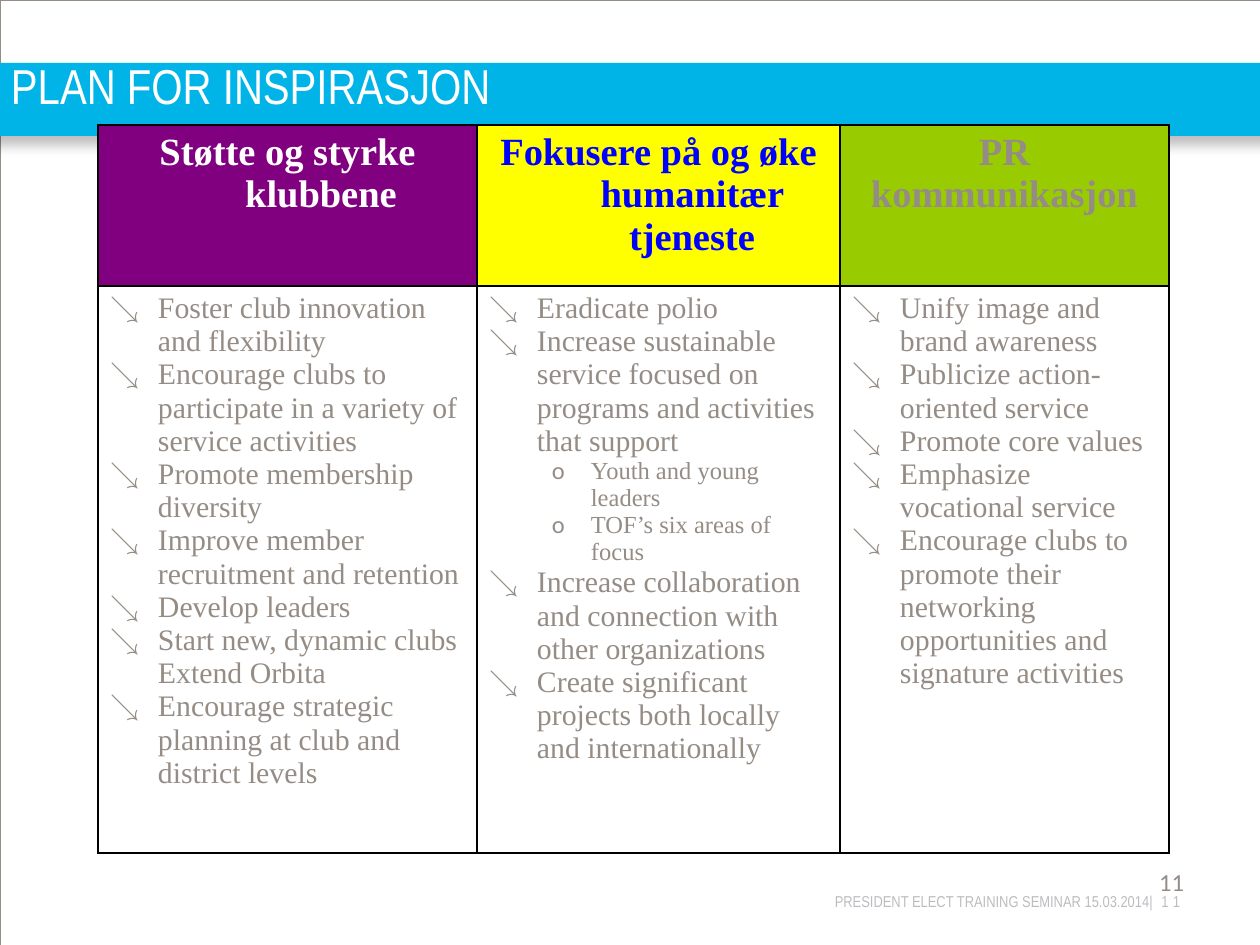
from lxml.etree import SubElement as Sub
from pptx import Presentation
from pptx.dml.color import RGBColor as Rgb
from pptx.enum.shapes import MSO_SHAPE as Kind
from pptx.enum.text import MSO_ANCHOR as Anchor, PP_ALIGN as Align
from pptx.oxml.ns import qn
from pptx.util import Pt

PX = 914400 / 126
PAGE = (0, 0, 1260, 945)
THEME = {
    "bar": "01B4E7", "grey": "958D85", "pale": "BCBDC0", "white": "FFFFFF",
    "ink": "000000", "head": 22, "item": 17, "sub": 14, "title": 28,
    "foot": 9, "page": 14, "narrow": "Arial Narrow", "serif": "Times New Roman",
    "sans": "Calibri",
}
COLS = [
    (379, "800080", "FFFFFF", ["Støtte og styrke klubbene"], [
        (0, "Foster club innovation and flexibility"),
        (0, "Encourage clubs to participate in a variety of service activities"),
        (0, "Promote membership diversity"),
        (0, "Improve member recruitment and retention"),
        (0, "Develop leaders"),
        (0, "Start new, dynamic clubs Extend Orbita"),
        (0, "Encourage strategic planning at club and district levels")]),
    (363, "FFFF00", "0000FF", ["Fokusere på og øke humanitær tjeneste"], [
        (0, "Eradicate polio"),
        (0, "Increase sustainable service focused on programs and activities that support"),
        (1, "Youth and young leaders"),
        (1, "TOF’s six areas of focus"),
        (0, "Increase collaboration and connection with other organizations"),
        (0, "Create significant projects both locally and internationally")]),
    (329, "99CC00", THEME["grey"], ["PR", "kommunikasjon"], [
        (0, "Unify image and brand awareness"),
        (0, "Publicize action-oriented service"),
        (0, "Promote core values"),
        (0, "Emphasize vocational service"),
        (0, "Encourage clubs to promote their networking opportunities and signature activities")]),
]
BULLETS = [("↘", 48, -48, "item", "serif"), ("o", 102, -39, "sub", "sans")]


def emu(*vals):
    return [round(v * PX) for v in vals]


def apply(obj, **vals):
    for key, val in vals.items():
        setattr(obj, key, val)


def paint(fill, tone):
    fill.solid()
    fill.fore_color.rgb = Rgb.from_string(tone)


def style(font, size, face, tone, bold=False):
    apply(font, size=Pt(THEME[size]), name=THEME[face], bold=bold)
    font.color.rgb = Rgb.from_string(tone)


def margins(obj, sides):
    names = ("left", "top", "right", "bottom")
    apply(obj, **{"margin_" + n: v for n, v in zip(names, emu(*sides))})


def indent(para, left, hang):
    for key, val in zip(("marL", "indent"), emu(left, hang)):
        para._p.get_or_add_pPr().set(key, str(val))


def label(slide, box, text, look, sides=(0, 0, 0, 0), **form):
    frame = slide.shapes.add_textbox(*emu(*box)).text_frame
    apply(frame, word_wrap=True, vertical_anchor=form.pop("anchor", Anchor.TOP))
    margins(frame, sides)
    para = frame.paragraphs[0]
    apply(para, **form)
    run = para.add_run()
    run.text = text
    style(run.font, *look)
    return para


def footer(slide, box):
    look = ("foot", "narrow", THEME["pale"])
    para = label(slide, box, "PRESIDENT ELECT TRAINING SEMINAR 15.03.2014|", look,
                 (0, 0, 13, 0), alignment=Align.RIGHT)
    run = para.add_run()
    run.text = " 11"
    style(run.font, *look)
    run.font._element.set("spc", "300")


def border(slide, box):
    rect = slide.shapes.add_shape(Kind.RECTANGLE, *emu(*box))
    rect.shadow.inherit = False
    rect.fill.background()
    paint(rect.line.fill, THEME["grey"])
    rect.line.width = Pt(0.13)


def banner(slide, box):
    x, y, w, h = box
    bar = slide.shapes.add_shape(Kind.RECTANGLE, *emu(x - 10, y, w + 20, h))
    bar.shadow.inherit = False
    paint(bar.fill, THEME["bar"])
    bar.line.fill.background()
    glow = Sub(bar._element.spPr.find(qn("a:effectLst")), qn("a:outerShdw"),
               blurRad=str(Pt(7)), dist=str(Pt(4.8)), dir="5400000",
               algn="ctr", rotWithShape="0")
    tone = Sub(glow, qn("a:srgbClr"), val=THEME["ink"])
    Sub(tone, qn("a:alpha"), val="25000")
    label(slide, (x, y - 8, w, 59), "PLAN FOR INSPIRASJON",
          ("title", "narrow", THEME["white"]), (11, 0, 0, 0), anchor=Anchor.MIDDLE)


def edges(cell):
    props = cell._tc.get_or_add_tcPr()
    for side in ("lnL", "lnR", "lnT", "lnB"):
        line = Sub(props, qn("a:" + side), w=str(Pt(1)))
        Sub(Sub(line, qn("a:solidFill")), qn("a:srgbClr"), val=THEME["ink"])


def paras(cell, count):
    frame = cell.text_frame
    for _ in range(count - 1):
        frame.add_paragraph()
    return frame.paragraphs


def heading(cell, lines, tone):
    for para, text in zip(paras(cell, len(lines)), lines):
        indent(para, 67, -67)
        para.alignment = Align.CENTER
        run = para.add_run()
        run.text = text
        style(run.font, "head", "serif", tone, True)


def listing(cell, items):
    for para, (level, text) in zip(paras(cell, len(items)), items):
        mark, left, hang, size, face = BULLETS[level]
        para.level = level
        indent(para, left, hang)
        props = para._p.get_or_add_pPr()
        Sub(props, qn("a:buFont"), typeface=THEME[face])
        Sub(props, qn("a:buChar"), char=mark)
        run = para.add_run()
        run.text = text
        style(run.font, size, "serif", THEME["grey"])


def plan(slide, box):
    table = slide.shapes.add_table(2, len(COLS), *emu(*box)).table
    apply(table, first_row=False, horz_banding=False)
    for row, high in zip(table.rows, emu(161, box[3] - 161)):
        row.height = high
    for i, (wide, fill, tone, lines, items) in enumerate(COLS):
        table.columns[i].width = emu(wide)[0]
        head, body = table.cell(0, i), table.cell(1, i)
        for cell in (head, body):
            margins(cell, (12, 6, 12, 6))
            edges(cell)
        paint(head.fill, fill)
        body.fill.background()
        heading(head, lines, tone)
        listing(body, items)


def main():
    deck = Presentation()
    deck.slide_width, deck.slide_height = emu(*PAGE[2:])
    slide = deck.slides.add_slide(deck.slide_layouts[6])
    footer(slide, (755, 892, 438, 19))
    border(slide, PAGE)
    banner(slide, (0, 63, 1260, 73))
    plan(slide, (98, 125, 1071, 728))
    label(slide, (903, 861, 294, 66), "11", ("page", "sans", THEME["grey"]),
          (13, 6, 13, 6), alignment=Align.RIGHT)
    deck.save("out.pptx")


if __name__ == "__main__":
    main()
